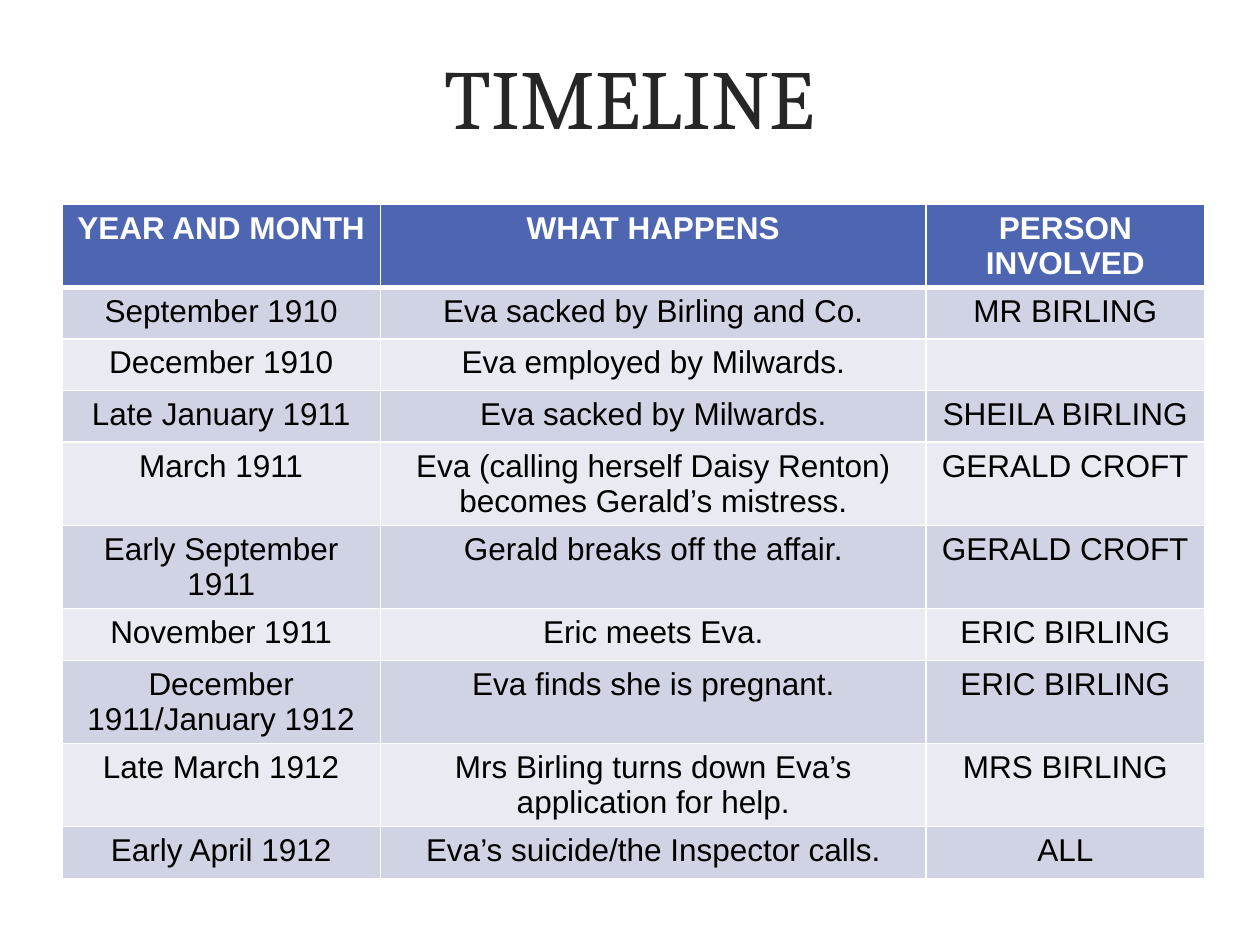
from lxml.etree import SubElement
from pptx import Presentation
from pptx.dml.color import RGBColor
from pptx.enum.text import MSO_ANCHOR as Anchor, PP_ALIGN as Align
from pptx.oxml.ns import qn
from pptx.util import Inches, Pt

# Content
TITLE = "TIMELINE"
HEADINGS = ("YEAR AND MONTH", "WHAT HAPPENS", "PERSON INVOLVED")
EVENTS = [
    ("September 1910", "Eva sacked by Birling and Co.", "MR BIRLING"),
    ("December 1910", "Eva employed by Milwards.", ""),
    ("Late January 1911", "Eva sacked by Milwards.", "SHEILA BIRLING"),
    ("March 1911", "Eva (calling herself Daisy Renton) becomes Gerald’s mistress.",
     "GERALD CROFT"),
    ("Early September 1911", "Gerald breaks off the affair.", "GERALD CROFT"),
    ("November 1911", "Eric meets Eva.", "ERIC BIRLING"),
    ("December 1911/January 1912", "Eva finds she is pregnant.", "ERIC BIRLING"),
    ("Late March 1912", "Mrs Birling turns down Eva’s application for help.",
     "MRS BIRLING"),
    ("Early April 1912", "Eva’s suicide/the Inspector calls.", "ALL"),
]

# Layout in inches and formats
TITLE_AREA = (0.6, -0.03, 8.8, 1.58)
TABLE_AREA = (0.49, 1.62, 9.08, 5.53)
COLUMN_WIDTHS = (2.53, 4.33, 2.21)
ROW_HEIGHT = 0.41
HEADER_FILL, BANDS = "4E66B2", ("D0D3E4", "E9EAF2")
TITLE_FONT = {"name": "Cambria", "size": Pt(48), "bold": False}
HEADER_FONT = {"name": "Arial", "size": Pt(18), "bold": True}
BODY_FONT = {**HEADER_FONT, "bold": False}


def color(value):
    return RGBColor.from_string(value)


def write(frame, text, font_format, text_color):
    para = frame.paragraphs[0]
    para.text = text
    para.alignment = Align.CENTER
    for name, value in font_format.items():
        setattr(para.font, name, value)
    para.font.color.rgb = color(text_color)


def set_borders(cell, widths):
    """Draw white borders; the lines must come before the cell's fill."""
    properties = cell._tc.get_or_add_tcPr()
    for side, width in widths.items():
        line = SubElement(properties, qn(f"a:ln{side}"), w=str(Pt(width)))
        fill = SubElement(line, qn("a:solidFill"))
        SubElement(fill, qn("a:srgbClr"), val="FFFFFF")


deck = Presentation()
deck.slide_width, deck.slide_height = Inches(10), Inches(7.5)
page = deck.slides.add_slide(deck.slide_layouts[5])

# Title
title = page.shapes.title
title.left, title.top, title.width, title.height = map(Inches, TITLE_AREA)
title.text_frame.vertical_anchor = Anchor.MIDDLE
write(title.text_frame, TITLE, TITLE_FONT, "262626")

# Timeline table
rows = [HEADINGS, *EVENTS]
holder = page.shapes.add_table(len(rows), len(HEADINGS), *map(Inches, TABLE_AREA))
table = holder.table
for column, width in zip(table.columns, COLUMN_WIDTHS):
    column.width = Inches(width)

for row_index, texts in enumerate(rows):
    table.rows[row_index].height = Inches(ROW_HEIGHT)
    is_header = row_index == 0
    for column_index, text in enumerate(texts):
        cell = table.cell(row_index, column_index)
        set_borders(cell, {"L": 1, "R": 1, "T": 3 if row_index == 1 else 1,
                           "B": 3 if is_header else 1})
        cell.fill.solid()
        cell.fill.fore_color.rgb = color(
            HEADER_FILL if is_header else BANDS[(row_index - 1) % 2])
        write(cell.text_frame, text, HEADER_FONT if is_header else BODY_FONT,
              "FFFFFF" if is_header else "000000")
holder.height = Inches(TABLE_AREA[3])

deck.save("out.pptx")
